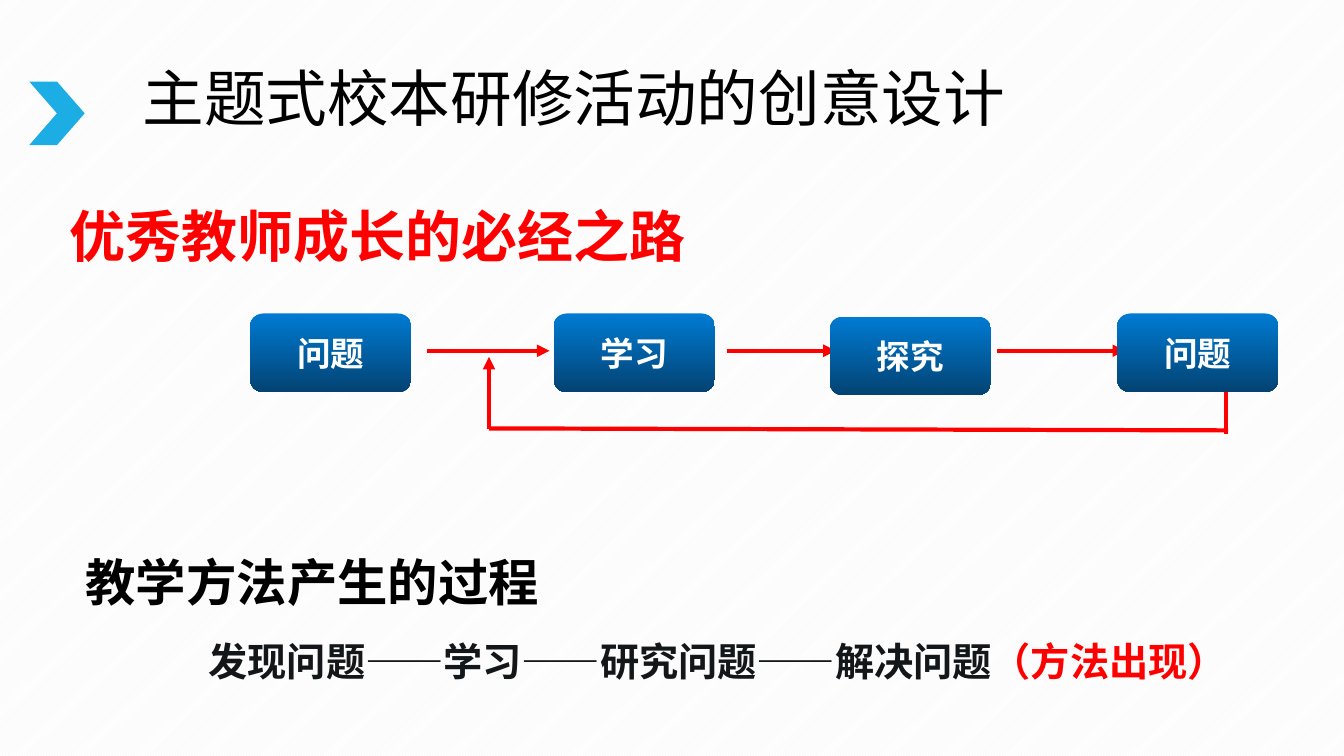
from lxml import etree
from pptx import Presentation
from pptx.dml.color import RGBColor
from pptx.enum.dml import MSO_PATTERN
from pptx.enum.shapes import MSO_CONNECTOR, MSO_SHAPE
from pptx.enum.text import MSO_ANCHOR, PP_ALIGN
from pptx.oxml.ns import qn
from pptx.util import Inches, Pt

CHEVRON = MSO_SHAPE.CHEVRON
STEP_BOX = MSO_SHAPE.FLOWCHART_ALTERNATE_PROCESS
STRAIGHT = MSO_CONNECTOR.STRAIGHT
STRIPES = MSO_PATTERN.LIGHT_UPWARD_DIAGONAL
MIDDLE = MSO_ANCHOR.MIDDLE
TOP = MSO_ANCHOR.TOP
LEFT, CENTER, JUSTIFY = PP_ALIGN.LEFT, PP_ALIGN.CENTER, PP_ALIGN.JUSTIFY

FONT = "Noto Sans CJK SC"
COLORS = {
    "white": "FFFFFF",
    "stripe": "F2F2F2",
    "chevron": "1CADE4",
    "black": "000000",
    "ink": "141719",
    "red": "FF0000",
    "box_top": "007BD3",
    "box_bottom": "034373",
}
STEPS = [("问题", 2.48, 3.11), ("学习", 5.49, 3.11),
         ("探究", 8.23, 3.14), ("问题", 11.08, 3.11)]
FORWARD_ARROWS = [(4.24, 5.45), (7.21, 8.29), (9.89, 11.16)]
ARROW_Y = 3.48
RETURN_X = 4.85


def color(name):
    return RGBColor.from_string(COLORS[name])


def style_run(run, size, color_name, bold):
    run.font.size = Pt(size)
    run.font.bold = bold
    run.font.color.rgb = color(color_name)
    run.font.name = FONT
    etree.SubElement(run._r.get_or_add_rPr(), qn("a:ea"), typeface=FONT)


def add_text(slide, box, parts, size, align=LEFT, spacing=1.0,
             bold=True, anchor=TOP, inset=True):
    frame = slide.shapes.add_textbox(*map(Inches, box)).text_frame
    frame.word_wrap = True
    frame.vertical_anchor = anchor
    if not inset:
        frame.margin_left = frame.margin_right = 0
        frame.margin_top = frame.margin_bottom = 0
    paragraph = frame.paragraphs[0]
    paragraph.alignment = align
    paragraph.line_spacing = spacing
    for words, color_name in parts:
        run = paragraph.add_run()
        run.text = words
        style_run(run, size, color_name, bold)


def add_chevron(slide):
    chevron = slide.shapes.add_shape(
        CHEVRON, Inches(0.29), Inches(0.81), Inches(0.55), Inches(0.63))
    chevron.shadow.inherit = False
    chevron.fill.solid()
    chevron.fill.fore_color.rgb = color("chevron")
    chevron.line.fill.background()


def add_step(slide, label, left, top):
    step = slide.shapes.add_shape(
        STEP_BOX, Inches(left), Inches(top), Inches(1.6), Inches(0.78))
    step.shadow.inherit = False
    step.line.fill.background()
    step.fill.gradient()
    step.fill.gradient_angle = 270
    for stop, name in zip(step.fill.gradient_stops, ("box_top", "box_bottom")):
        stop.color.rgb = color(name)
    frame = step.text_frame
    frame.text = label
    frame.vertical_anchor = MIDDLE
    frame.paragraphs[0].alignment = CENTER
    style_run(frame.paragraphs[0].runs[0], 24, "white", True)


def add_line(slide, start, end, arrow=False):
    line = slide.shapes.add_connector(
        STRAIGHT, *map(Inches, start), *map(Inches, end))
    line.line.width = Pt(3)
    line.line.color.rgb = color("red")
    if arrow:
        etree.SubElement(line.line._get_or_add_ln(), qn("a:tailEnd"),
                         type="triangle")
    etree.SubElement(line._element.spPr, qn("a:effectLst"))


def add_cycle(slide):
    for start_x, end_x in FORWARD_ARROWS:
        add_line(slide, (start_x, ARROW_Y), (end_x, ARROW_Y), arrow=True)
    add_line(slide, (12.16, 3.82), (12.16, 4.31))
    add_line(slide, (12.18, 4.27), (RETURN_X, 4.25))
    add_line(slide, (RETURN_X, 4.26), (RETURN_X, 3.54), arrow=True)
    for label, left, top in STEPS:
        add_step(slide, label, left, top)


def main():
    deck = Presentation()
    deck.slide_width, deck.slide_height = Inches(13.33), Inches(7.5)
    slide = deck.slides.add_slide(deck.slide_layouts[6])
    backdrop = slide.background.fill
    backdrop.patterned()
    backdrop.pattern = STRIPES
    backdrop.fore_color.rgb = color("stripe")
    backdrop.back_color.rgb = color("white")

    add_chevron(slide)
    add_text(slide, (1.13, 0.65, 9.13, 0.71),
             [("主题式校本研修活动的创意设计", "black")], 44,
             CENTER, 0.9, bold=False, anchor=MIDDLE)
    add_cycle(slide)
    add_text(slide, (2.07, 6.28, 10.73, 1),
             [("发现问题——学习——研究问题——解决问题", "ink"),
              ("（方法出现）", "red")], 28, JUSTIFY, 1.1, inset=False)
    add_text(slide, (0.75, 5.36, 5.73, 0.72),
             [("教学方法产生的过程", "black")], 36, JUSTIFY, 1.1)
    add_text(slide, (0.69, 2, 7.91, 0.67),
             [("优秀教师成长的必经之路", "red")], 40, inset=False)
    deck.save("out.pptx")


if __name__ == "__main__":
    main()
